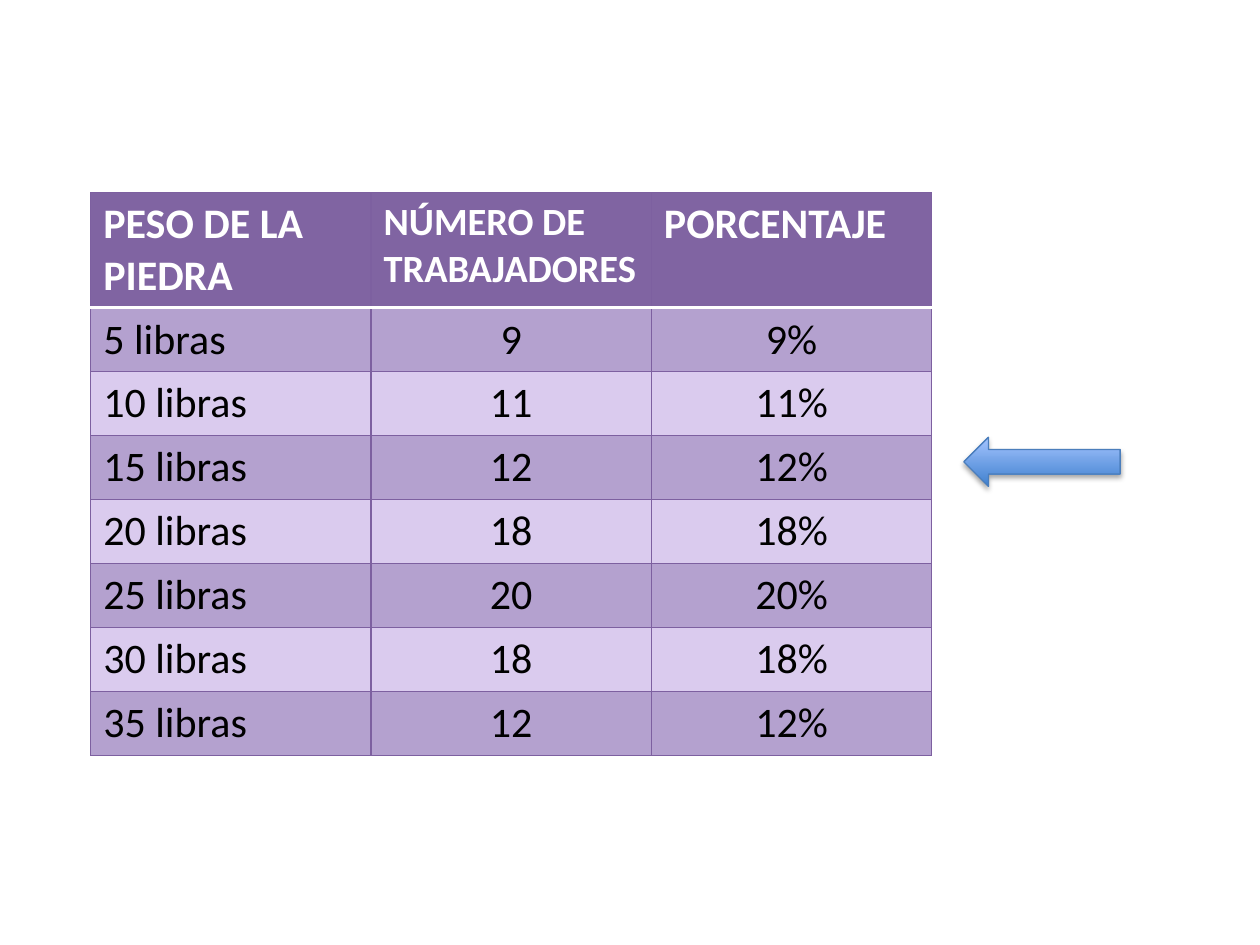
from lxml import etree
from pptx import Presentation
from pptx.dml.color import RGBColor
from pptx.enum.shapes import MSO_SHAPE
from pptx.enum.text import PP_ALIGN
from pptx.oxml.ns import qn
from pptx.util import Inches, Pt

LEFT_ARROW = MSO_SHAPE.LEFT_ARROW
LEFT, CENTER = PP_ALIGN.LEFT, PP_ALIGN.CENTER
BLANK_LAYOUT = 6

# Table grid, in inches
TABLE_LEFT, TABLE_TOP = 0.72, 1.53
COLUMN_WIDTH = 2.225
HEADER_HEIGHT, ROW_HEIGHT = 0.91, 0.507

HEADER_FILL, ODD_FILL, EVEN_FILL = "8064A2", "B4A1CF", "DACBEE"
GRID_LINE = ("7D60A0", 0.75)
HEADER_RULE = ("FFFFFF", 2)

HEADERS = [("PESO DE LA PIEDRA", 24), ("NÚMERO DE TRABAJADORES", 22), ("PORCENTAJE", 24)]
WORKERS_BY_WEIGHT = {5: 9, 10: 11, 15: 12, 20: 18, 25: 20, 30: 18, 35: 12}


def rgb(color):
    return RGBColor.from_string(color)


def add_color(parent, color):
    fill = etree.SubElement(parent, qn("a:solidFill"))
    etree.SubElement(fill, qn("a:srgbClr"), val=color)


def set_borders(cell, top, bottom):
    properties = cell._tc.get_or_add_tcPr()
    sides = {"L": GRID_LINE, "R": GRID_LINE, "T": top, "B": bottom}
    for side, (color, width) in sides.items():
        line = etree.SubElement(properties, qn(f"a:ln{side}"), w=str(Pt(width)))
        add_color(line, color)


def fill_cell(cell, text, size, fill, color, bold=False, align=LEFT):
    cell.fill.solid()
    cell.fill.fore_color.rgb = rgb(fill)
    cell.text = text
    paragraph = cell.text_frame.paragraphs[0]
    paragraph.alignment = align
    font = paragraph.font
    font.name, font.size, font.bold = "Calibri", Pt(size), bold
    font.color.rgb = rgb(color)


def add_weight_table(slide):
    rows, columns = len(WORKERS_BY_WEIGHT) + 1, len(HEADERS)
    table = slide.shapes.add_table(
        rows, columns, Inches(TABLE_LEFT), Inches(TABLE_TOP),
        Inches(columns * COLUMN_WIDTH),
        Inches(HEADER_HEIGHT + (rows - 1) * ROW_HEIGHT)).table
    for column in table.columns:
        column.width = Inches(COLUMN_WIDTH)
    for index, row in enumerate(table.rows):
        row.height = Inches(ROW_HEIGHT if index else HEADER_HEIGHT)

    # Header row
    for cell, (heading, size) in zip(table.rows[0].cells, HEADERS):
        set_borders(cell, GRID_LINE, HEADER_RULE)
        fill_cell(cell, heading, size, HEADER_FILL, "FFFFFF", bold=True)

    # One row per stone weight, in alternating bands
    for index, (weight, workers) in enumerate(WORKERS_BY_WEIGHT.items(), 1):
        values = (f"{weight} libras", f"{workers}", f"{workers}%")
        for column, value in enumerate(values):
            cell = table.cell(index, column)
            set_borders(cell, HEADER_RULE if index == 1 else GRID_LINE, GRID_LINE)
            fill_cell(cell, value, 24, ODD_FILL if index % 2 else EVEN_FILL,
                      "000000", align=CENTER if column else LEFT)


def add_soft_shadow(shape):
    shape.shadow.inherit = False
    effects = shape._element.spPr.find(qn("a:effectLst"))
    shadow = etree.SubElement(
        effects, qn("a:outerShdw"), blurRad=str(Pt(3.1)), dist=str(Pt(1.8)),
        dir="5400000", rotWithShape="0")
    color = etree.SubElement(shadow, qn("a:srgbClr"), val="000000")
    etree.SubElement(color, qn("a:alpha"), val="35000")


def add_row_arrow(slide, left, top, width, height):
    arrow = slide.shapes.add_shape(
        LEFT_ARROW, Inches(left), Inches(top), Inches(width), Inches(height))
    arrow.fill.gradient()
    arrow.fill.gradient_angle = 90
    for stop, color in zip(arrow.fill.gradient_stops, ("3F80CE", "A4C4FF")):
        stop.color.rgb = rgb(color)
    arrow.line.color.rgb = rgb("4B7EBC")
    arrow.line.width = Pt(0.75)
    add_soft_shadow(arrow)


def main():
    presentation = Presentation()
    presentation.slide_width, presentation.slide_height = Inches(10), Inches(7.5)
    slide = presentation.slides.add_slide(presentation.slide_layouts[BLANK_LAYOUT])
    add_weight_table(slide)
    add_row_arrow(slide, 7.65, 3.47, 1.24, 0.39)
    presentation.save("out.pptx")


if __name__ == "__main__":
    main()
